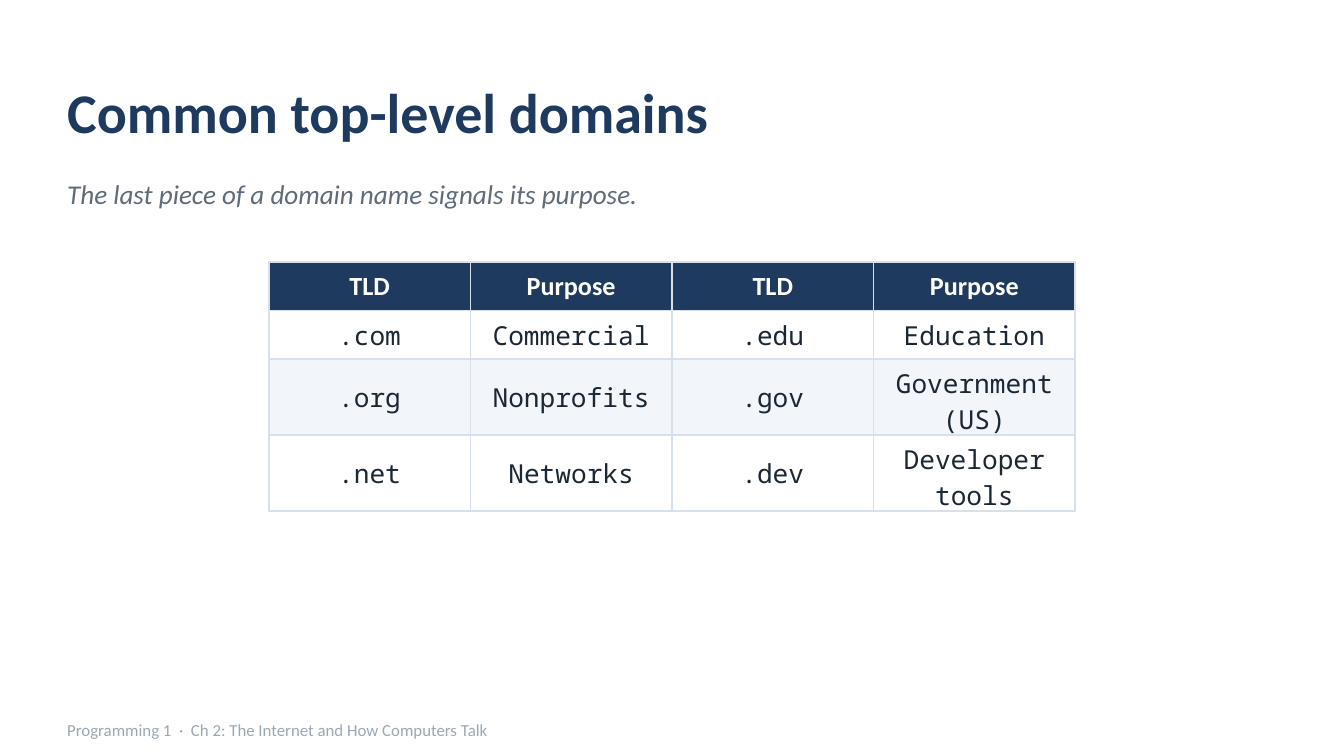
from lxml.etree import SubElement
from pptx import Presentation
from pptx.dml.color import RGBColor
from pptx.enum.text import MSO_ANCHOR, PP_ALIGN
from pptx.oxml.ns import qn
from pptx.util import Inches, Pt

NAVY, INK, GRID = "1F3A5F", "1B2733", "D8E0E9"


def rgb(value):
    return RGBColor.from_string(value)


def write(tf, text, color, align=PP_ALIGN.LEFT, **font):
    p = tf.paragraphs[0]
    p.alignment = align
    r = p.add_run()
    r.text = text
    r.font.color.rgb = rgb(color)
    for name, value in font.items():
        setattr(r.font, name, value)


prs = Presentation()
prs.slide_width = Inches(10)
prs.slide_height = prs.slide_width * 9 // 16
s = prs.slides.add_slide(prs.slide_layouts[5])

title = s.shapes.title
title.left, title.top = Inches(0.5), Inches(0.4)
title.width, title.height = Inches(9), Inches(0.85)
subtitle = s.shapes.add_textbox(Inches(0.5), Inches(1.24), Inches(9), Inches(0.4))
footer = s.shapes.add_textbox(Inches(0.5), Inches(5.3), Inches(8), Inches(0.26))

frame_format = {
    "margin_left": 0, "margin_top": 0, "margin_right": 0, "margin_bottom": 0,
    "word_wrap": True, "vertical_anchor": MSO_ANCHOR.MIDDLE,
}
texts = [
    (title, "Common top-level domains", NAVY, {"size": Pt(30), "bold": True}),
    (subtitle, "The last piece of a domain name signals its purpose.", "5E6B79",
     {"size": Pt(14.5), "italic": True}),
    (footer, "Programming 1  ·  Ch 2: The Internet and How Computers Talk", "9AA8B6",
     {"size": Pt(9)}),
]
for sp, text, color, font in texts:
    for name, value in frame_format.items():
        setattr(sp.text_frame, name, value)
    write(sp.text_frame, text, color, name="Calibri", **font)

rows = [
    ["TLD", "Purpose", "TLD", "Purpose"],
    [".com", "Commercial", ".edu", "Education"],
    [".org", "Nonprofits", ".gov", "Government (US)"],
    [".net", "Networks", ".dev", "Developer tools"],
]
header_font = {"name": "Calibri", "size": Pt(14), "bold": True}
body_font = {"name": "Noto Sans Mono", "size": Pt(14), "bold": False}
cell_format = {
    "margin_left": Inches(0.1), "margin_top": Inches(0.05),
    "margin_right": Inches(0.1), "margin_bottom": Inches(0.05),
    "vertical_anchor": MSO_ANCHOR.MIDDLE,
}
table = s.shapes.add_table(
    len(rows), len(rows[0]), Inches(2), Inches(1.95), Inches(6), Inches(1)
).table

for i, row in enumerate(rows):
    table.rows[i].height = Inches(0.36)
    if i == 0:
        fill, color, font = NAVY, "FFFFFF", header_font
    else:
        fill, color, font = "FFFFFF" if i % 2 else "F2F5F9", INK, body_font
    for j, text in enumerate(row):
        cell = table.cell(i, j)
        for name, value in cell_format.items():
            setattr(cell, name, value)
        write(cell.text_frame, text, color, PP_ALIGN.CENTER, **font)
        tcPr = cell._tc.get_or_add_tcPr()
        for side in ("a:lnL", "a:lnR", "a:lnT", "a:lnB"):
            ln = SubElement(tcPr, qn(side), w=str(Pt(1)))
            line_fill = SubElement(ln, qn("a:solidFill"))
            SubElement(line_fill, qn("a:srgbClr"), val=GRID)
        cell.fill.solid()
        cell.fill.fore_color.rgb = rgb(fill)

prs.save("out.pptx")
